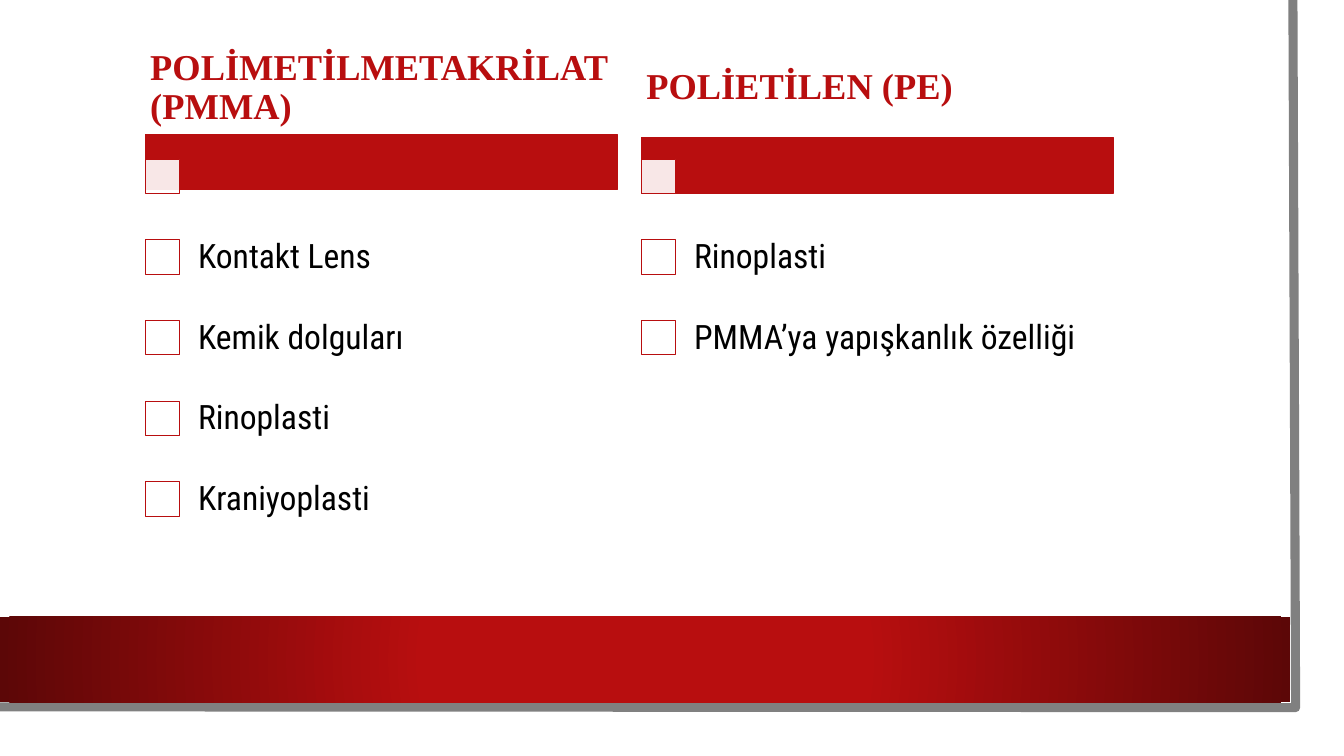
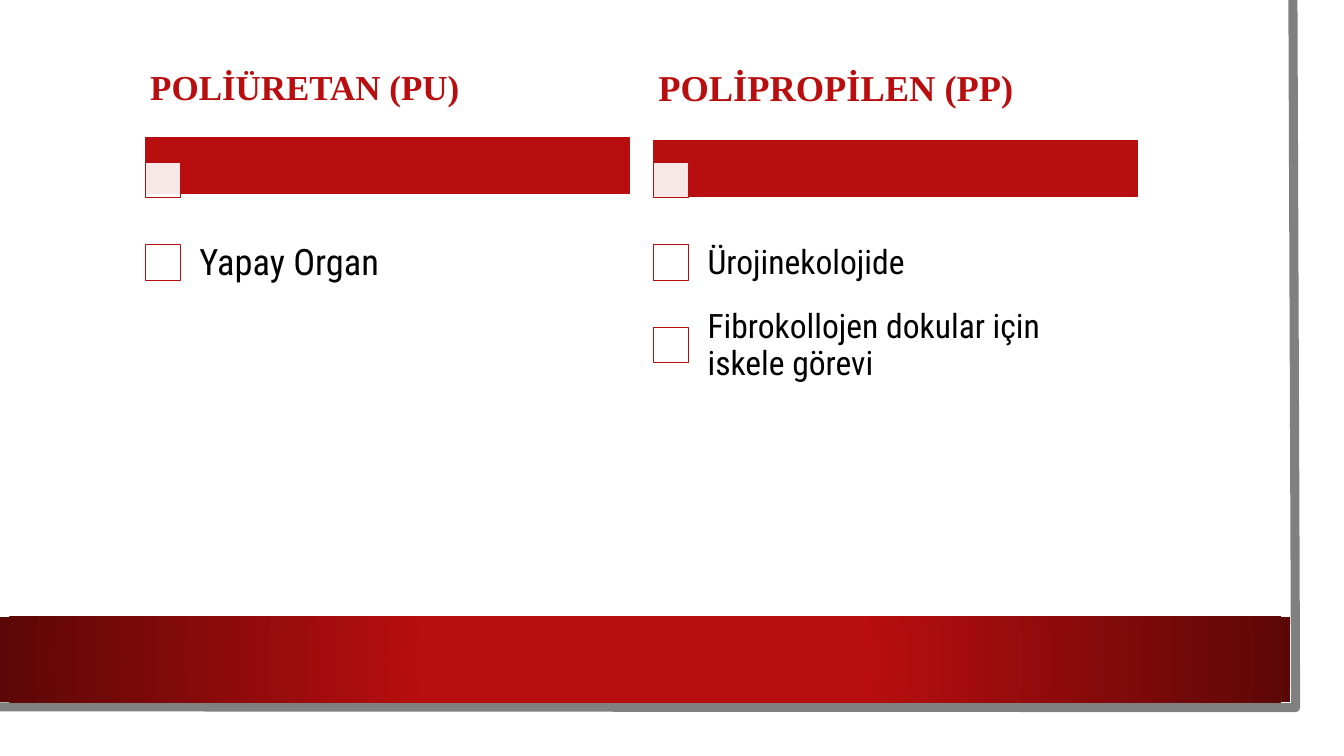
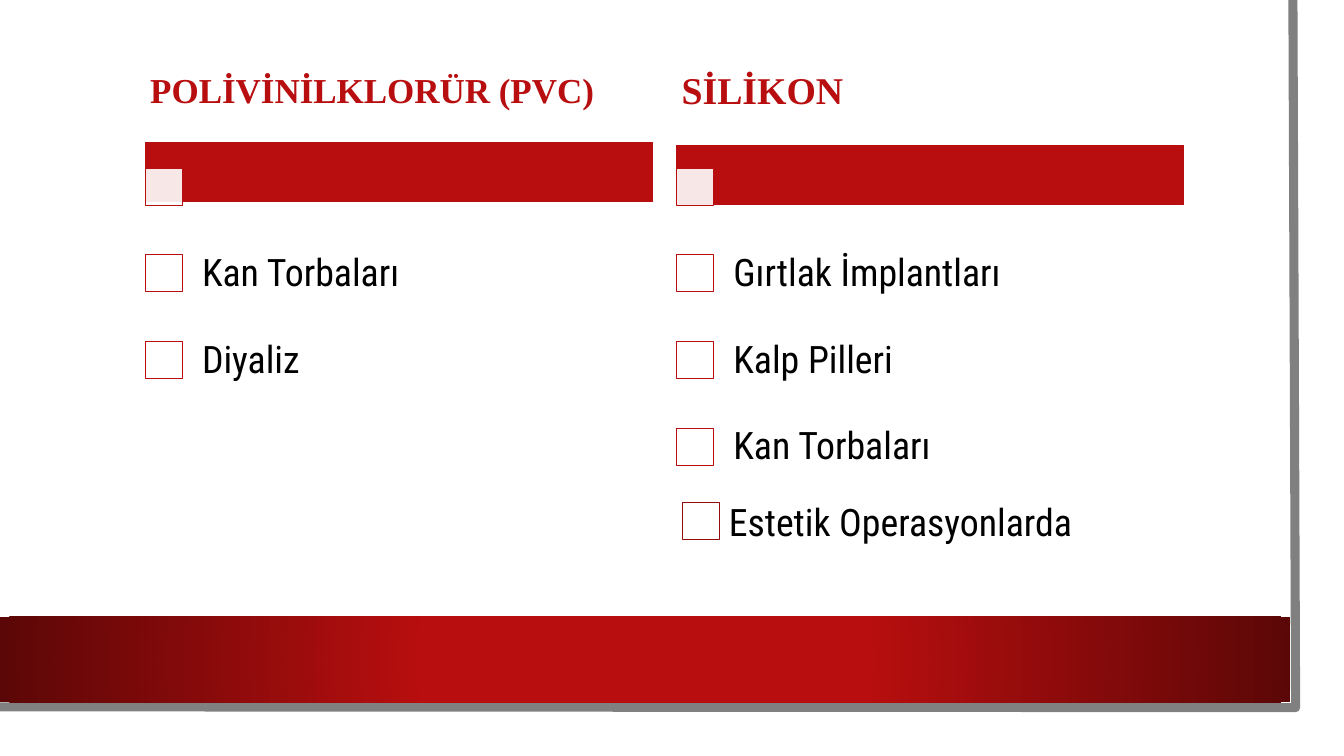
from dataclasses import dataclass
from math import ceil
from pptx import Presentation
from pptx.dml.color import RGBColor as RGB
from pptx.enum.shapes import MSO_SHAPE as Kind
from pptx.enum.text import MSO_ANCHOR as Anchor, MSO_AUTO_SIZE as Fit, PP_ALIGN as Align
from pptx.oxml import parse_xml
from pptx.oxml.ns import nsdecls, qn
from pptx.util import Inches, Pt


@dataclass(frozen=True)
class Theme:
    red: str = "B80E0F"
    dark: str = "5C0707"
    wine: str = "930B0C"
    gray: str = "808080"
    white: str = "FFFFFF"
    ink: str = "000000"
    head: str = "Times New Roman"
    body: str = "Roboto Condensed"
    thin: float = 0.75
    frame: float = 6.5
    lead: float = 1.1


@dataclass(frozen=True)
class Grid:
    wide: float
    left: float = 1.44
    top: float = 0.38
    gap: float = 0.24

    def col(self, num):
        return self.left + num * (self.wide + self.gap)

    def share(self, part):
        return self.wide * part

    @property
    def pitch(self):
        return self.share(0.171)

    @property
    def side(self):
        return self.share(0.073)

    def mid(self, row):
        return self.top + self.share(0.378) + self.pitch * (row + 0.5)


THEME = Theme()
WIDE, HIGH = 13.33, 7.5

DECK = [
    (4.68, [
        ("POLİMETİLMETAKRİLAT (PMMA)", 26, 24,
         ["Kontakt Lens", "Kemik dolguları", "Rinoplasti", "Kraniyoplasti"]),
        ("POLİETİLEN (PE)", 26, 24,
         ["Rinoplasti", "PMMA’ya yapışkanlık özelliği"]),
    ]),
    (4.8, [
        ("POLİÜRETAN (PU)", 25, 26, ["Yapay Organ"]),
        ("POLİPROPİLEN (PP)", 26, 24,
         ["Ürojinekolojide", "Fibrokollojen dokular için iskele görevi"]),
    ]),
    (5.03, [
        ("POLİVİNİLKLORÜR (PVC)", 25, 27, ["Kan Torbaları", "Diyaliz"]),
        ("SİLİKON", 27, 27,
         ["Gırtlak İmplantları", "Kalp Pilleri", "Kan Torbaları"]),
    ]),
]


def place(shape, x, y, w, h):
    shape.left, shape.top = Inches(x), Inches(y)
    shape.width, shape.height = Inches(w), Inches(h)


def say(shape, lines, size, font, color=THEME.ink, bold=False,
        anchor=Anchor.TOP, lead=0.9, gaps=None, pad=(0, 0)):
    frame = shape.text_frame
    frame.word_wrap = True
    frame.auto_size = Fit.NONE
    frame.vertical_anchor = anchor
    frame.margin_left = frame.margin_right = Inches(pad[0])
    frame.margin_top = frame.margin_bottom = Inches(pad[1])
    for num, text in enumerate(lines):
        para = frame.paragraphs[0] if num == 0 else frame.add_paragraph()
        props = para._p.get_or_add_pPr()
        props.set("marL", "0")
        props.set("indent", "0")
        props.append(parse_xml(f'<a:buNone {nsdecls("a")}/>'))
        para.alignment = Align.LEFT
        para.line_spacing = lead
        para.space_before = Pt(gaps[num] if gaps else 0)
        para.space_after = Pt(0)
        run = para.add_run()
        run.text = text
        run.font.size, run.font.name, run.font.bold = Pt(size), font, bold
        run.font.color.rgb = RGB.from_string(color)


def block(slide, x, y, w, h, fill, line=None, alpha=None):
    shape = slide.shapes.add_shape(
        Kind.RECTANGLE, Inches(x), Inches(y), Inches(w), Inches(h))
    shape.shadow.inherit = False
    shape.fill.solid()
    shape.fill.fore_color.rgb = RGB.from_string(fill)
    if alpha:
        tint = shape.element.spPr.find(qn("a:solidFill"))[0]
        tint.append(parse_xml(f'<a:alpha {nsdecls("a")} val="{alpha * 1000}"/>'))
    if line:
        shape.line.color.rgb = RGB.from_string(line)
        shape.line.width = Pt(THEME.thin)
    else:
        shape.line.fill.background()
    return shape


def glow(shape, inner, outer):
    props = shape.element.spPr
    stops = "".join(
        f'<a:gs pos="{pos}"><a:srgbClr val="{color}"/></a:gs>'
        for pos, color in ((34000, inner), (100000, outer)))
    props.replace(props.find(qn("a:solidFill")), parse_xml(
        f'<a:gradFill {nsdecls("a")} rotWithShape="1"><a:gsLst>{stops}</a:gsLst>'
        '<a:path path="circle"><a:fillToRect l="50000" t="50000" r="50000" b="50000"/>'
        '</a:path></a:gradFill>'))


def edge(slide):
    spots = [(Inches(WIDE * x), Inches(HIGH * y))
             for x, y in ((0.962, 0), (0.964, 0.936), (0, 0.935))]
    pen = slide.shapes.build_freeform(*spots[0])
    pen.add_line_segments(spots[1:], close=False)
    shape = pen.convert_to_shape()
    shape.shadow.inherit = False
    shape.fill.background()
    shape.line.color.rgb = RGB.from_string(THEME.gray)
    shape.line.width = Pt(THEME.frame)
    return shape


def dress(layout, slide):
    page = block(slide, 0, 0, WIDE * 0.983, HIGH * 0.969, THEME.white)
    rim = edge(slide)
    band = block(slide, 0, HIGH * 0.816, WIDE * 0.96, HIGH * 0.113, THEME.red)
    glow(band, THEME.red, THEME.dark)
    for num, shape in enumerate((page, rim, band)):
        layout.shapes.element.insert(2 + num, shape.element)


def tick(slide, grid, x, mid, line=THEME.red, alpha=None):
    block(slide, x, mid - grid.side / 2, grid.side, grid.side,
          THEME.white, line, alpha)


def column(slide, grid, num, head, body, data):
    title, big, size, items = data
    x, tall = grid.col(num), grid.share(0.211)
    block(slide, x, grid.top + tall - (0 if num else 0.03),
          grid.wide, grid.share(0.117), THEME.red, THEME.red)
    tick(slide, grid, x, grid.mid(-1), alpha=90)
    place(head, x, grid.top, grid.wide, tall)
    say(head, [title], big, THEME.head, THEME.red, True, Anchor.MIDDLE,
        pad=(0.05, 0.04))
    for row in range(len(items)):
        tick(slide, grid, x, grid.mid(row))
    step = size * THEME.lead
    counts = [ceil(len(item) / 30) for item in items]
    gaps = [0] + [grid.pitch * 72 - step * (a + b) / 2
                  for a, b in zip(counts, counts[1:])]
    place(body, x + grid.share(0.112), grid.mid(0) - step / 144,
          grid.share(0.848), grid.pitch * len(items))
    say(body, items, size, THEME.body, lead=Pt(step), gaps=gaps)


def extra(slide, grid, text, size):
    x, mid = grid.col(1) + 0.06, grid.mid(3) - 0.12
    tick(slide, grid, x, mid, THEME.wine)
    box = slide.shapes.add_textbox(
        Inches(x + 0.36), Inches(mid - 0.28), Inches(4.18), Inches(0.56))
    say(box, [text], size, THEME.body, anchor=Anchor.MIDDLE, lead=1.0,
        pad=(0.1, 0.05))


def main():
    deck = Presentation()
    deck.slide_width, deck.slide_height = Inches(WIDE), Inches(HIGH)
    layout = deck.slide_layouts[4]
    for num, (wide, cols) in enumerate(DECK):
        slide = deck.slides.add_slide(layout)
        if num == 0:
            dress(layout, slide)
        grid = Grid(wide)
        slots = {slot.placeholder_format.idx: slot for slot in slide.placeholders}
        spare = slots[2].element
        spare.getparent().remove(spare)
        for col, (head, body) in enumerate(((0, 1), (3, 4))):
            column(slide, grid, col, slots[head], slots[body], cols[col])
    extra(slide, grid, "Estetik Operasyonlarda", 27)
    deck.save("out.pptx")


if __name__ == "__main__":
    main()
